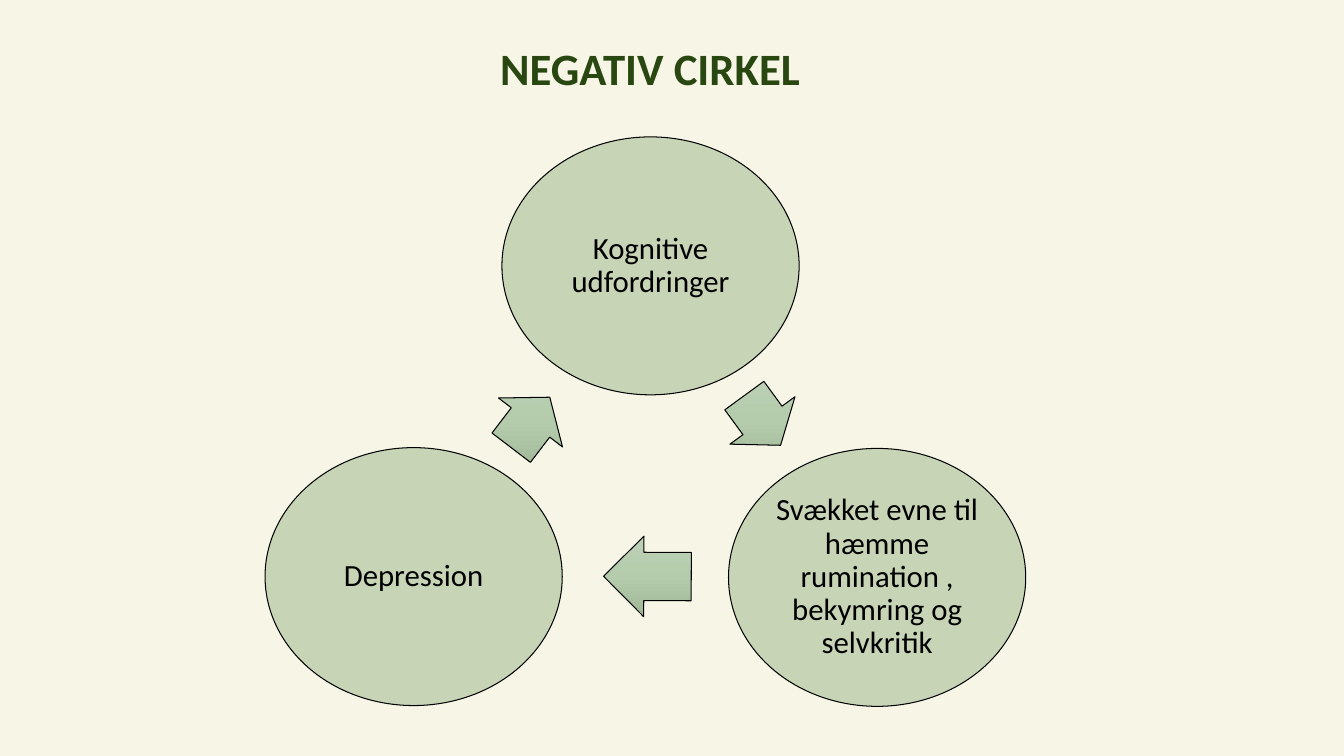
from dataclasses import dataclass

from pptx import Presentation, oxml
from pptx.dml.color import RGBColor
from pptx.enum import shapes, text
from pptx.oxml import ns
from pptx.util import Cm, Pt


@dataclass(frozen=True)
class Theme:
    """Colours and type sizes of the slide."""
    font: str = "Calibri"
    background: str = "F7F6E6"
    title: str = "294711"
    ink: str = "000000"
    circle: str = "C7D5B6"
    arrow: tuple = ((0, "BED1B7"), (50, "B4CCAB"), (100, "9FB796"))
    title_size: int = 32
    body_size: int = 22
    line_width: float = 0.75


THEME = Theme()
CIRCLE_SIZE = (7.49, 6.5)
ARROW_HEIGHT = 2.03
CIRCLES = (
    ("Kognitive udfordringer", 5.97, 0),
    ("Svækket evne til hæmme rumination , bekymring og selvkritik", 11.68, 7.85),
    ("Depression", 0, 7.83),
)
ARROWS = ((11.76, 6.13, 1.55, 53.9), (8.53, 10.06, 2.21, 180.2), (5.89, 6.18, 1.6, 307.4))


def set_all(target, values):
    """Set every named attribute on the target."""
    for name, value in values.items():
        setattr(target, name, value)


def write(tf, wording, size, colour, bold=False, margin=0.08):
    """Write one centred paragraph in a text frame."""
    sides = ("left", "top", "right", "bottom")
    set_all(tf, {f"margin_{side}": Cm(margin) for side in sides})
    set_all(tf, {"word_wrap": True, "vertical_anchor": text.MSO_ANCHOR.MIDDLE})
    p = tf.paragraphs[0]
    set_all(p, {"alignment": text.PP_ALIGN.CENTER, "line_spacing": 0.9})
    r = p.add_run()
    r.text = wording
    set_all(r.font, {"name": THEME.font, "size": Pt(size), "bold": bold})
    r.font.color.rgb = RGBColor.from_string(colour)


def add_outlined(s, kind, left, top, width, height):
    """Add a preset shape with a thin dark outline and no shadow."""
    sp = s.shapes.add_shape(kind, Cm(left), Cm(top), Cm(width), Cm(height))
    sp.shadow.inherit = False
    sp.line.color.rgb = RGBColor.from_string(THEME.ink)
    sp.line.width = Pt(THEME.line_width)
    return sp


def fill_gradient(sp):
    """Fill a shape with a top-to-bottom gradient that ignores its rotation."""
    stops = "".join(
        f'<a:gs pos="{pos * 1000}"><a:srgbClr val="{colour}"/></a:gs>'
        for pos, colour in THEME.arrow
    )
    grad = oxml.parse_xml(
        f'<a:gradFill {ns.nsdecls("a")} rotWithShape="0"><a:gsLst>{stops}</a:gsLst>'
        '<a:lin ang="5400000" scaled="0"/></a:gradFill>'
    )
    sp.element.spPr.find(ns.qn("a:prstGeom")).addnext(grad)


def add_title(s, left, top, width, height):
    """Place the heading in the given box."""
    sp = s.shapes.add_textbox(Cm(left), Cm(top), Cm(width), Cm(height))
    write(sp.text_frame, "NEGATIV CIRKEL", THEME.title_size, THEME.title, True, 0.25)


def add_cycle(s, left, top):
    """Place the three circles and the arrows between them from a corner."""
    for (wording, x, y), (ax, ay, width, rotation) in zip(CIRCLES, ARROWS):
        sp = add_outlined(s, shapes.MSO_SHAPE.OVAL, left + x, top + y, *CIRCLE_SIZE)
        sp.fill.solid()
        sp.fill.fore_color.rgb = RGBColor.from_string(THEME.circle)
        write(sp.text_frame, wording, THEME.body_size, THEME.ink)

        sp = add_outlined(s, shapes.MSO_SHAPE.RIGHT_ARROW, left + ax, top + ay, width, ARROW_HEIGHT)
        sp.adjustments[0], sp.adjustments[1] = 0.6, 0.5
        sp.rotation = rotation
        fill_gradient(sp)


def main():
    """Build and save the slide."""
    prs = Presentation()
    set_all(prs, {"slide_width": Cm(33.87), "slide_height": Cm(19.05)})
    s = prs.slides.add_slide(prs.slide_layouts[6])
    s.background.fill.solid()
    s.background.fill.fore_color.rgb = RGBColor.from_string(THEME.background)
    add_title(s, 1.78, 0.51, 29.21, 2.57)
    add_cycle(s, 6.68, 3.45)
    prs.save("out.pptx")


if __name__ == "__main__":
    main()
